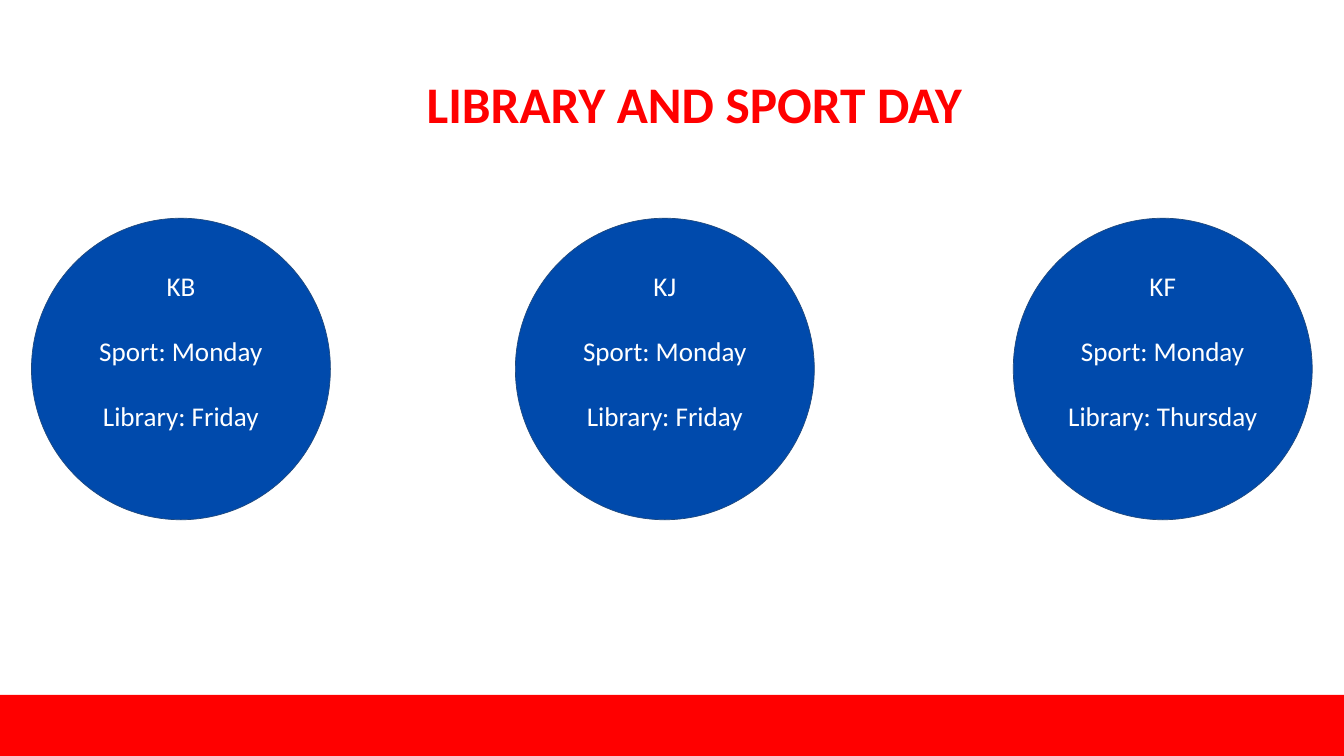
from pptx import Presentation
from pptx.dml.color import RGBColor as RGB
from pptx.enum.shapes import MSO_SHAPE as Shape
from pptx.enum.text import MSO_ANCHOR as Anchor, PP_ALIGN as Align
from pptx.util import Cm, Pt

HUES = {"red": "FF0000", "blue": "004AAC", "navy": "1F497D", "white": "FFFFFF"}

deck = Presentation()
deck.slide_width, deck.slide_height = Cm(50.8), Cm(28.58)
slide = deck.slides.add_slide(deck.slide_layouts[6])


def add_form(kind, left, top, width, height, hue):
    """Add a flat filled shape without a line or shadow."""
    form = slide.shapes.add_shape(kind, Cm(left), Cm(top), Cm(width), Cm(height))
    form.shadow.inherit = False
    form.fill.solid()
    form.fill.fore_color.rgb = RGB.from_string(HUES[hue])
    form.line.fill.background()
    return form


def add_text(para, words, size, hue, bold=False):
    """Add one centred run to a paragraph."""
    para.alignment = Align.CENTER
    run = para.add_run()
    run.text = words
    font = run.font
    font.name, font.size, font.bold = "Calibri", Pt(size), bold
    font.color.rgb = RGB.from_string(HUES[hue])


# Title
title = slide.shapes.add_textbox(Cm(3.18), Cm(2.74), Cm(46.13), Cm(2.39))
frame = title.text_frame
frame.word_wrap = True
frame.margin_left = frame.margin_right = frame.margin_top = frame.margin_bottom = 0
add_text(frame.paragraphs[0], "LIBRARY AND SPORT DAY", 55, "red", True)

# Bottom band
add_form(Shape.RECTANGLE, 0, 26.27, 50.8, 2.31, "red")

# One circle for each class
groups = [
    (1.19, "KB", "Monday", "Friday"),
    (19.48, "KJ", "Monday", "Friday"),
    (38.3, "KF", "Monday", "Thursday"),
]
for left, name, sport, books in groups:
    disc = add_form(Shape.OVAL, left, 8.25, 11.3, 11.4, "blue")
    disc.line.color.rgb = RGB.from_string(HUES["navy"])
    disc.line.width = Pt(0.75)
    frame = disc.text_frame
    frame.word_wrap = True
    frame.vertical_anchor = Anchor.TOP
    frame.margin_left = frame.margin_right = Cm(0.25)
    frame.margin_top = frame.margin_bottom = Cm(0.25)
    lines = [name, f"Sport: {sport}", f"Library: {books}"]
    for i, words in enumerate(lines):
        para = frame.add_paragraph() if i else frame.paragraphs[0]
        para.space_before = Pt(35 if i else 0)
        add_text(para, words, 29, "white")

deck.save("out.pptx")
